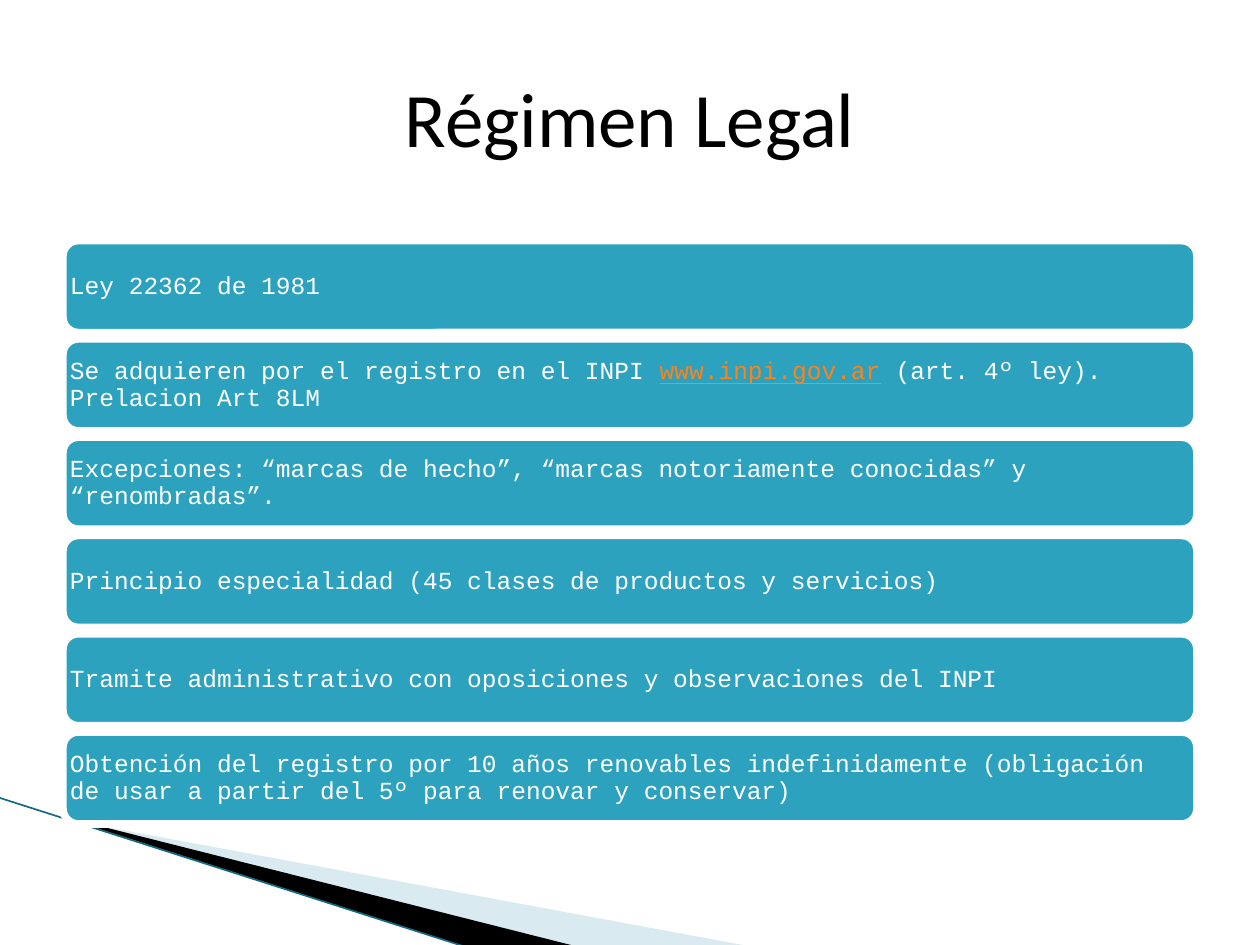
import pptx
import pptx.util
import pptx.dml.color
import pptx.enum.shapes
import pptx.enum.text
import pptx.oxml
import pptx.oxml.ns
from pptx.util import Inches

SHAPE = pptx.enum.shapes.MSO_SHAPE
ALIGN = pptx.enum.text.PP_ALIGN
MIDDLE = pptx.enum.text.MSO_ANCHOR.MIDDLE


def paint(target, code):
    """Set a colour on a fill, line fill or font fill."""
    target.solid()
    target.fore_color.rgb = pptx.dml.color.RGBColor.from_string(code)


def add_node(parent, tag, **attrs):
    node = pptx.oxml.parse_xml(f"<{tag} {pptx.oxml.ns.nsdecls('a')}/>")
    for key, value in attrs.items():
        node.set(key, value)
    parent.append(node)


class Deck:
    teal, white, black = "2DA2BF", "FFFFFF", "000000"
    pale, edge, link = "A0CBDC", "16697F", "FF8119"
    head, body = "Calibri", "Courier New"

    def __init__(self):
        self.prs = pptx.Presentation()
        self.prs.slide_width = Inches(10)
        self.prs.slide_height = Inches(7.5)
        self.slide = self.prs.slides.add_slide(self.prs.slide_layouts[6])
        paint(self.slide.background.fill, self.white)

    def wedge(self, points, code, alpha=None):
        spots = [(Inches(x), Inches(y)) for x, y in points]
        build = self.slide.shapes.build_freeform(*spots[0])
        build.add_line_segments(spots[1:])
        shape = build.convert_to_shape()
        shape.shadow.inherit = False
        shape.line.fill.background()
        paint(shape.fill, code)
        if alpha:
            tint = shape.fill._xPr.find(".//" + pptx.oxml.ns.qn("a:srgbClr"))
            add_node(tint, "a:alpha", val=str(alpha * 1000))

    def line(self, x1, y1, x2, y2):
        kind = pptx.enum.shapes.MSO_CONNECTOR.STRAIGHT
        line = self.slide.shapes.add_connector(
            kind, Inches(x1), Inches(y1), Inches(x2), Inches(y2))
        paint(line.line.fill, self.edge)
        line.line.width = pptx.util.Pt(0.95)
        add_node(line._element.spPr, "a:effectLst")

    def style(self, run, font, size, code):
        run.font.name = font
        run.font.size = pptx.util.Pt(size)
        paint(run.font.fill, code)

    def title(self, text):
        box = self.slide.shapes.add_textbox(
            Inches(0.5), Inches(0.3), Inches(9), Inches(1.25))
        frame = box.text_frame
        frame.word_wrap = True
        frame.vertical_anchor = MIDDLE
        frame.text = text
        para = frame.paragraphs[0]
        para.alignment = ALIGN.CENTER
        self.style(para.runs[0], self.head, 44, self.black)

    def bar(self, top, parts):
        bar = self.slide.shapes.add_shape(
            SHAPE.ROUNDED_RECTANGLE,
            Inches(0.5), Inches(top), Inches(9), Inches(0.73))
        bar.shadow.inherit = False
        paint(bar.fill, self.teal)
        paint(bar.line.fill, self.white)
        bar.line.width = pptx.util.Pt(4.33)
        frame = bar.text_frame
        frame.word_wrap = True
        frame.vertical_anchor = MIDDLE
        frame.margin_left = frame.margin_right = Inches(0.02)
        frame.margin_top = frame.margin_bottom = Inches(0.02)
        para = frame.paragraphs[0]
        para.alignment = ALIGN.LEFT
        para.line_spacing = 0.9
        for part in parts:
            run = para.add_run()
            run.text = part
            web = part.startswith("www.")
            self.style(run, self.body, 14, self.link if web else self.white)
            if web:
                run.font.underline = True


ITEMS = [
    ["Ley 22362 de 1981"],
    ["Se adquieren por el registro en el INPI ", "www.inpi.gov.ar",
     " (art. 4º ley). Prelacion Art 8LM"],
    ["Excepciones: “marcas de hecho”, “marcas notoriamente conocidas” y "
     "“renombradas”."],
    ["Principio especialidad (45 clases de productos y servicios)"],
    ["Tramite administrativo con oposiciones y observaciones del INPI"],
    ["Obtención del registro por 10 años renovables indefinidamente "
     "(obligación de usar a partir del 5º para renovar y conservar)"],
]


def main():
    deck = Deck()

    # Corner wedges
    deck.wedge([(0.55, 6.51), (5.95, 7.51), (4.56, 7.51), (0.55, 6.5)],
               deck.pale, 40)
    deck.wedge([(0.53, 6.49), (4.57, 7.51), (3.72, 7.52), (0.54, 6.5)],
               deck.black)
    deck.line(-0.01, 6.33, 3.71, 7.52)

    # Title
    deck.title("Régimen Legal")

    # Stack of bars
    first, step = 1.91, 0.78
    for row, parts in enumerate(ITEMS):
        deck.bar(first + row * step, parts)

    deck.prs.save("out.pptx")


if __name__ == "__main__":
    main()
